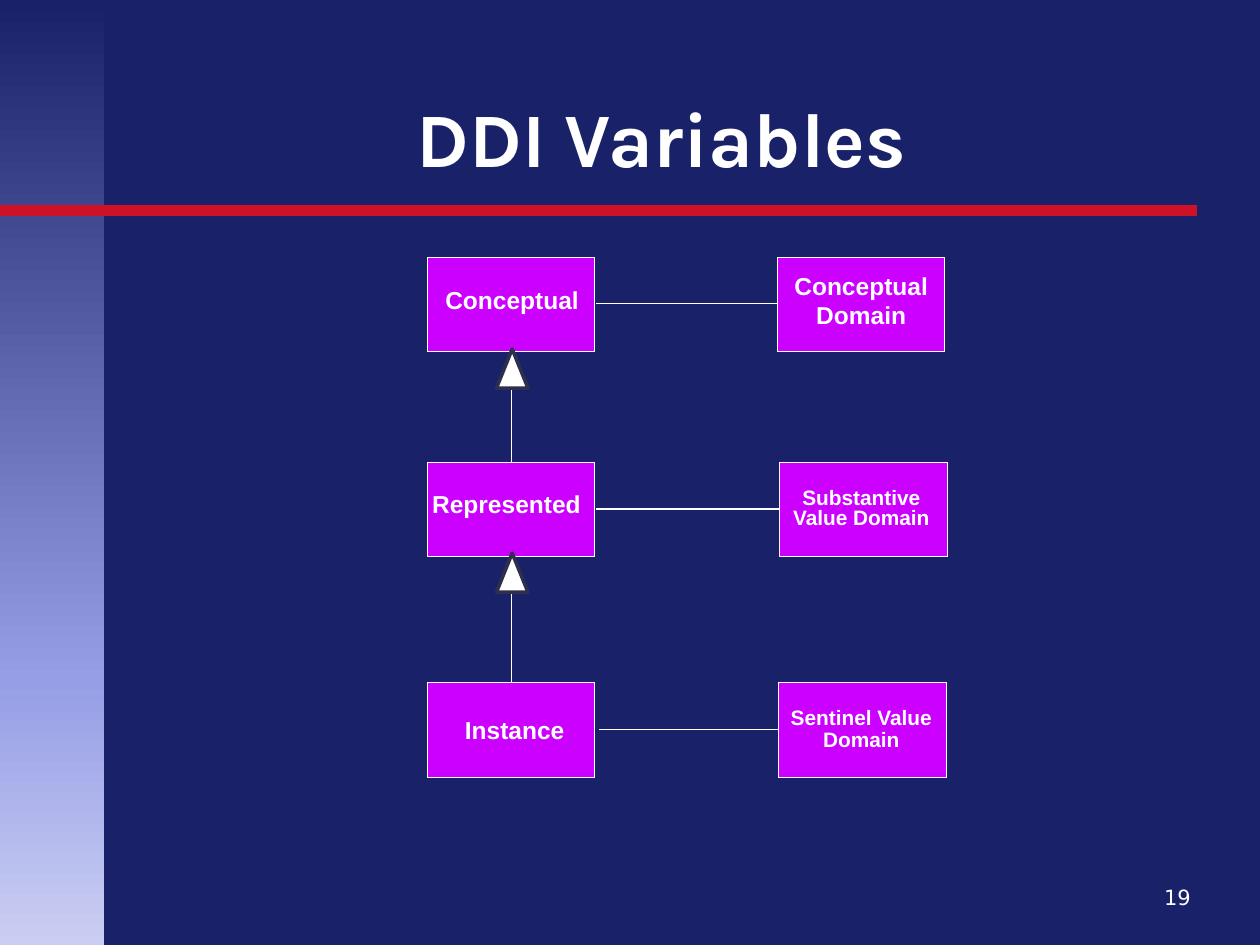
from copy import deepcopy
from lxml import etree
from pptx import Presentation
from pptx.dml.color import RGBColor
from pptx.enum.dml import MSO_THEME_COLOR
from pptx.enum.shapes import MSO_CONNECTOR, MSO_SHAPE
from pptx.enum.text import MSO_ANCHOR, PP_ALIGN
from pptx.oxml.ns import qn
from pptx.util import Pt

PX = 9144
RECT, TRIANGLE = MSO_SHAPE.RECTANGLE, MSO_SHAPE.ISOSCELES_TRIANGLE
STRAIGHT = MSO_CONNECTOR.STRAIGHT
CENTER, RIGHT = PP_ALIGN.CENTER, PP_ALIGN.RIGHT
MIDDLE, BOTTOM = MSO_ANCHOR.MIDDLE, MSO_ANCHOR.BOTTOM
NAVY = RGBColor(0x19, 0x21, 0x68)
PERIWINKLE = RGBColor(0x96, 0x9E, 0xE6)
LAVENDER = RGBColor(0xCA, 0xCE, 0xF2)
RED = RGBColor(0xCE, 0x11, 0x26)
PURPLE = RGBColor(0xCC, 0x00, 0xFF)
SLATE = RGBColor(0x2E, 0x2F, 0x4C)
WHITE = RGBColor(0xFF, 0xFF, 0xFF)

prs = Presentation()
prs.slide_width, prs.slide_height = 1000 * PX, 750 * PX
s = prs.slides.add_slide(prs.slide_layouts[5])
s.background.fill.solid()
s.background.fill.fore_color.rgb = NAVY


def add_line(x1, y1, x2, y2, color, width):
    ln = s.shapes.add_connector(STRAIGHT, x1 * PX, y1 * PX, x2 * PX, y2 * PX)
    ln.line.color.rgb = color
    ln.line.width = Pt(width)
    etree.SubElement(ln._element.spPr, qn("a:effectLst"))


def set_text(sp, box, text, size, font, bold=True, align=CENTER, anchor=MIDDLE, spacing=1.0):
    sp.left, sp.top, sp.width, sp.height = [v * PX for v in box]
    tf = sp.text_frame
    tf.word_wrap = True
    tf.vertical_anchor = anchor
    tf.margin_left = tf.margin_right = 5 * PX
    p = tf.paragraphs[0]
    p.alignment = align
    p.line_spacing = spacing
    r = p.add_run()
    r.text = text
    r.font.size = Pt(size)
    r.font.name = font
    r.font.bold = bold
    r.font.color.rgb = WHITE


band = s.shapes.add_shape(RECT, 0, 0, 83 * PX, 750 * PX)
band.shadow.inherit = False
band.line.fill.background()
band.fill.gradient()
band.fill.gradient_angle = 270
stop_list = band.fill._fill._gradFill.gsLst
stop_list.insert(1, deepcopy(stop_list[0]))
for stop, color, pos in zip(band.fill.gradient_stops, (NAVY, PERIWINKLE, LAVENDER), (0, 0.72, 1)):
    stop.color.rgb = color
    stop.position = pos
add_line(0, 167, 950, 167, RED, 6)

set_text(s.shapes.title, (100, 30, 850, 120), "DDI Variables", 44, "Karla", anchor=BOTTOM)

rows = [
    (204, "Conceptual", (341, 209, 131, 58), 617, 473, "Conceptual Domain", (618, 209, 131, 58), 14, 1.0),
    (367, "Represented", (331, 371, 142, 58), 619, 473, "Substantive Value Domain", (619, 375, 129, 58), 11.9, 0.8),
    (542, "Instance", (342, 550, 133, 58), 618, 475, "Sentinel Value Domain", (618, 550, 131, 58), 11.9, 0.9),
]
for top, name, name_box, right, line_left, domain, domain_box, size, spacing in rows:
    for left in (339, right):
        sp = s.shapes.add_shape(RECT, left * PX, top * PX, 133 * PX, 75 * PX)
        sp.shadow.inherit = False
        sp.fill.solid()
        sp.fill.fore_color.rgb = PURPLE
        sp.line.color.rgb = WHITE
        sp.line.width = Pt(0.5)
    set_text(s.shapes.add_textbox(0, 0, PX, PX), name_box, name, 14, "Arial")
    set_text(s.shapes.add_textbox(0, 0, PX, PX), domain_box, domain, size, "Arial", spacing=spacing)
    add_line(right, top + 37, line_left, top + 37, WHITE, 0.75)

for tip, bottom in ((277, 367), (439, 542)):
    add_line(406, bottom, 406, tip + 31, WHITE, 0.75)
    sp = s.shapes.add_shape(TRIANGLE, 394 * PX, tip * PX, 25 * PX, 31 * PX)
    sp.shadow.inherit = False
    sp.fill.solid()
    sp.fill.fore_color.rgb = WHITE
    sp.line.color.rgb = SLATE
    sp.line.width = Pt(2)

set_text(s.shapes.add_textbox(0, 0, PX, PX), (875, 692, 75, 40), "19", 12, "DejaVu Sans",
         bold=False, align=RIGHT)

prs.save("out.pptx")
